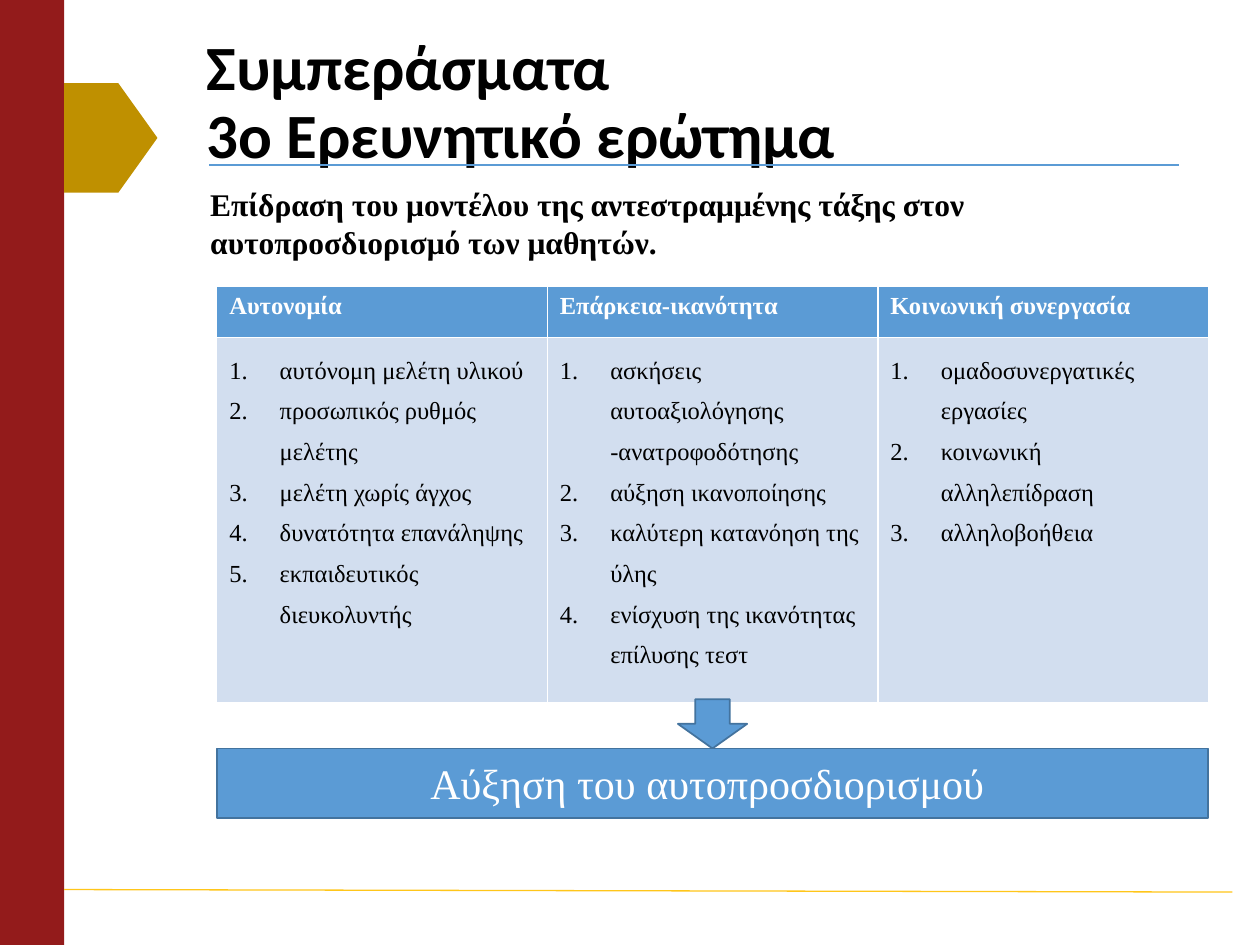
from dataclasses import dataclass

from lxml.etree import SubElement
from pptx import Presentation
from pptx.dml.color import RGBColor
from pptx.enum.shapes import MSO_CONNECTOR, MSO_SHAPE
from pptx.enum.text import MSO_ANCHOR, MSO_AUTO_SIZE, PP_ALIGN
from pptx.oxml.ns import qn
from pptx.util import Inches, Pt


@dataclass(frozen=True)
class Theme:
    blue: str = "5B9BD5"
    outline: str = "43739E"
    pale: str = "D2DEEF"
    red: str = "931B1B"
    gold: str = "BF9000"
    yellow: str = "FFC61A"
    black: str = "000000"
    white: str = "FFFFFF"
    heading_font: str = "Calibri"
    body_font: str = "Times New Roman"
    title: int = 36
    subtitle: int = 18
    table: int = 14
    conclusion: int = 24


def add_block(kind, left, top, width, height, color, outline=None):
    shape = slide.shapes.add_shape(
        kind, Inches(left), Inches(top), Inches(width), Inches(height))
    shape.shadow.inherit = False
    shape.fill.solid()
    shape.fill.fore_color.rgb = RGBColor.from_string(color)
    if outline:
        shape.line.color.rgb = RGBColor.from_string(outline)
        shape.line.width = Pt(1)
    else:
        shape.line.fill.background()
    return shape


def style_text(paragraph, size, color, bold=False, name=Theme.body_font):
    font = paragraph.font
    font.name, font.size, font.bold = name, Pt(size), bold
    font.color.rgb = RGBColor.from_string(color)


theme = Theme()
presentation = Presentation()
presentation.slide_width, presentation.slide_height = Inches(10), Inches(7.5)
slide = presentation.slides.add_slide(presentation.slide_layouts[5])

# Side bar, marker and rules
bar_width = 0.51
add_block(MSO_SHAPE.RECTANGLE, 0, 0, bar_width, 7.5, theme.red)
marker = add_block(MSO_SHAPE.PENTAGON, bar_width, 0.66, 0.74, 0.87, theme.gold)
marker.adjustments[0] = 0.42
rules = [(1.66, 1.31, 9.36, 1.31, theme.blue),
         (bar_width, 7.06, 9.78, 7.08, theme.yellow)]
for *ends, color in rules:
    rule = slide.shapes.add_connector(
        MSO_CONNECTOR.STRAIGHT, *[Inches(end) for end in ends])
    rule.line.color.rgb = RGBColor.from_string(color)
    rule.line.width = Pt(0.75)
    SubElement(rule._element.spPr, qn("a:effectLst"))

# Title and subtitle
title = slide.shapes.title
title.left, title.top = Inches(1.54), Inches(0.41)
title.width, title.height = Inches(7.87), Inches(0.84)
title.text_frame.text = "Συμπεράσματα\v3ο Ερευνητικό ερώτημα"
title.text_frame.auto_size = MSO_AUTO_SIZE.NONE
title.text_frame.vertical_anchor = MSO_ANCHOR.MIDDLE
paragraph = title.text_frame.paragraphs[0]
paragraph.alignment = PP_ALIGN.LEFT
paragraph.line_spacing = 0.9
style_text(paragraph, theme.title, theme.black, True, theme.heading_font)

subtitle = slide.shapes.add_textbox(
    Inches(1.57), Inches(1.42), Inches(7.48), Inches(0.71))
subtitle.text_frame.word_wrap = True
subtitle.text_frame.text = (
    "Επίδραση του μοντέλου της αντεστραμμένης τάξης στον "
    "αυτοπροσδιορισμό των μαθητών.")
style_text(subtitle.text_frame.paragraphs[0], theme.subtitle, theme.black, True)

# Findings: one column per need, with a numbered list below its heading
findings = {
    "Αυτονομία": [
        "αυτόνομη μελέτη υλικού", "προσωπικός ρυθμός μελέτης",
        "μελέτη χωρίς άγχος", "δυνατότητα επανάληψης",
        "εκπαιδευτικός διευκολυντής"],
    "Επάρκεια-ικανότητα": [
        "ασκήσεις αυτοαξιολόγησης -ανατροφοδότησης", "αύξηση ικανοποίησης",
        "καλύτερη κατανόηση της ύλης",
        "ενίσχυση της ικανότητας επίλυσης τεστ"],
    "Κοινωνική συνεργασία": [
        "ομαδοσυνεργατικές εργασίες", "κοινωνική αλληλεπίδραση",
        "αλληλοβοήθεια"],
}
left, width = 1.72, 7.87
header_height, list_height = 0.41, 2.89
table = slide.shapes.add_table(
    2, len(findings), Inches(left), Inches(2.27),
    Inches(width), Inches(header_height + list_height)).table
table.rows[0].height = Inches(header_height)
table.rows[1].height = Inches(list_height)
for column, (heading, items) in enumerate(findings.items()):
    header, body = table.cell(0, column), table.cell(1, column)
    for cell, color in ((header, theme.blue), (body, theme.pale)):
        cell.fill.solid()
        cell.fill.fore_color.rgb = RGBColor.from_string(color)
    header.text = heading
    style_text(header.text_frame.paragraphs[0], theme.table, theme.white, True)
    body.text = "\n".join(items)
    for paragraph in body.text_frame.paragraphs:
        paragraph.line_spacing = 1.5
        style_text(paragraph, theme.table, theme.black)
        properties = paragraph._p.get_or_add_pPr()
        properties.set("marL", str(Inches(0.4)))
        properties.set("indent", str(-Inches(0.4)))
        numbering = properties.makeelement(
            qn("a:buAutoNum"), {"type": "arabicPeriod"})
        properties.find(qn("a:defRPr")).addprevious(numbering)

# Conclusion
arrow_width = 0.55
add_block(MSO_SHAPE.DOWN_ARROW, left + (width - arrow_width) / 2, 5.55,
          arrow_width, 0.39, theme.blue, theme.outline)
conclusion = add_block(MSO_SHAPE.RECTANGLE, left, 5.94, width, 0.55,
                       theme.blue, theme.outline)
conclusion.text_frame.text = "Αύξηση του αυτοπροσδιορισμού "
conclusion.text_frame.vertical_anchor = MSO_ANCHOR.MIDDLE
paragraph = conclusion.text_frame.paragraphs[0]
paragraph.alignment = PP_ALIGN.CENTER
style_text(paragraph, theme.conclusion, theme.white)

presentation.save("out.pptx")
